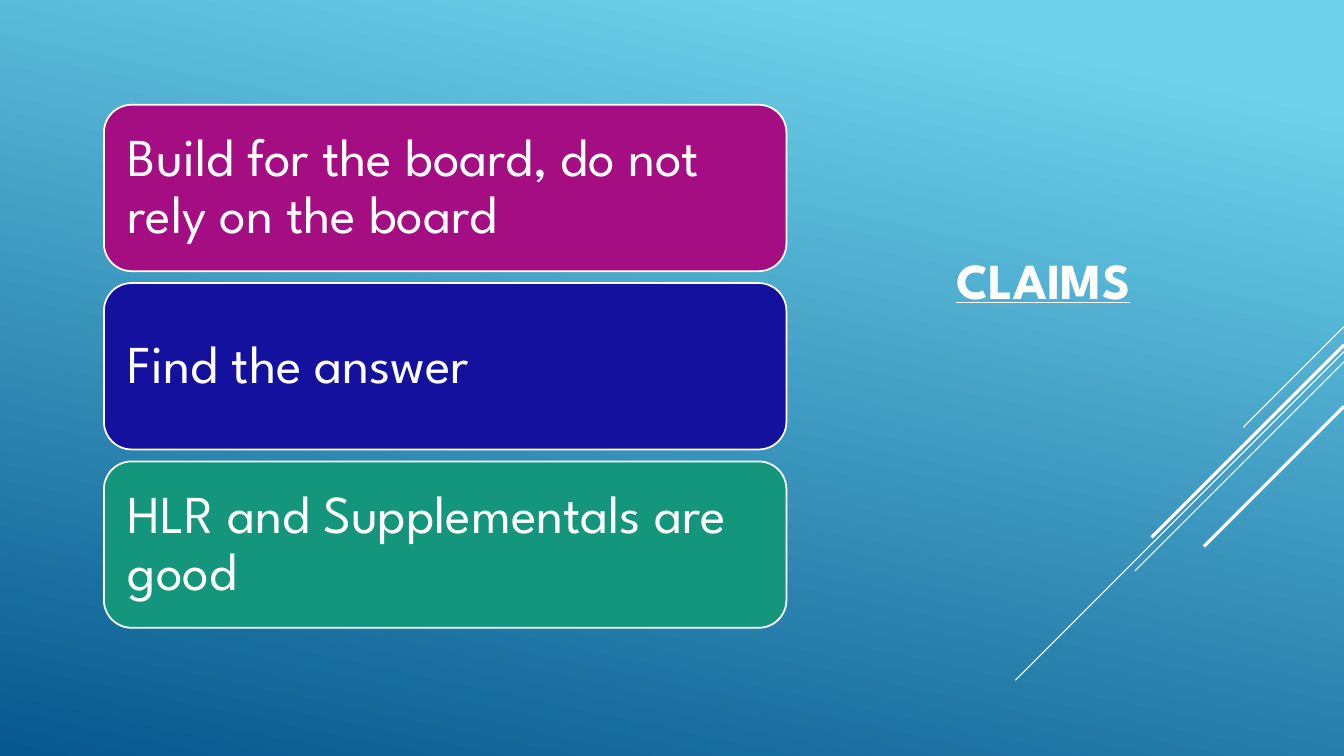
from lxml.etree import SubElement
from pptx import Presentation
from pptx.dml.color import RGBColor
from pptx.enum.shapes import MSO_CONNECTOR as Connector, MSO_SHAPE as Shape
from pptx.enum.text import MSO_ANCHOR as Anchor, MSO_AUTO_SIZE as AutoSize, PP_ALIGN as Align
from pptx.oxml.ns import qn
from pptx.util import Cm, Pt

FONT = "League Spartan"
WHITE = "FFFFFF"
WIDTH, HEIGHT = 33.87, 19.05
CLAIMS = [
    ("Build for the board, do not rely on the board", "A50E82"),
    ("Find the answer", "13119D"),
    ("HLR and Supplementals are good", "14967C"),
]
STREAKS = [
    (8.23, 2.54, 0.75),
    (8.86, 8.28, 0.75),
    (9.12, 5.27, 0.75),
    (8.69, 4.85, 2.25),
    (10.24, 3.53, 2.25),
]


def color(value):
    """Turn a hex string into a colour."""
    return RGBColor.from_string(value)


def format_text(text_frame, size, bold=False, underline=False):
    """Give a text frame the slide's common text style."""
    text_frame.word_wrap = True
    text_frame.auto_size = AutoSize.NONE
    text_frame.vertical_anchor = Anchor.MIDDLE
    for paragraph in text_frame.paragraphs:
        paragraph.alignment = Align.LEFT
        paragraph.line_spacing = 0.9
        for run in paragraph.runs:
            run.font.name = FONT
            run.font.size = Pt(size)
            run.font.bold = bold
            run.font.underline = underline
            run.font.color.rgb = color(WHITE)


def fill_background(slide):
    """Fill the background with the slanted blue gradient."""
    fill = slide.background.fill
    fill.gradient()
    fill.gradient_angle = 258
    for stop, (position, value) in zip(fill.gradient_stops, [(0.1, "6ED2EB"), (1, "06588E")]):
        stop.position = position
        stop.color.rgb = color(value)


def add_streaks(slide, right):
    """Draw the diagonal streaks falling leftwards from the right edge."""
    for top, run, weight in STREAKS:
        streak = slide.shapes.add_connector(
            Connector.STRAIGHT, Cm(right), Cm(top), Cm(right - run), Cm(top + run))
        streak.line.color.rgb = color(WHITE)
        streak.line.width = Pt(weight)
        SubElement(streak._element.spPr, qn("a:effectLst"))


def place_title(slide, left, top, width, height):
    """Place the title placeholder in its box."""
    title = slide.shapes.title
    title.left, title.top, title.width, title.height = map(Cm, (left, top, width, height))
    title.text_frame.text = "CLAIMS"
    format_text(title.text_frame, 36, bold=True, underline=True)


def add_claims(slide, left, top, width, height, gap=0.3):
    """Stack the claim cards evenly in the given box."""
    card_height = (height - gap * (len(CLAIMS) - 1)) / len(CLAIMS)
    for index, (text, fill) in enumerate(CLAIMS):
        card_top = top + index * (card_height + gap)
        card = slide.shapes.add_shape(
            Shape.ROUNDED_RECTANGLE, Cm(left), Cm(card_top), Cm(width), Cm(card_height))
        card.shadow.inherit = False
        card.fill.solid()
        card.fill.fore_color.rgb = color(fill)
        card.line.color.rgb = color(WHITE)
        card.line.width = Pt(1.25)
        text_frame = card.text_frame
        text_frame.text = text
        text_frame.margin_left = text_frame.margin_right = Cm(0.4)
        format_text(text_frame, 38)


def main():
    """Build the claims slide and save it."""
    presentation = Presentation()
    presentation.slide_width, presentation.slide_height = Cm(WIDTH), Cm(HEIGHT)
    slide = presentation.slides.add_slide(presentation.slide_layouts[5])
    fill_background(slide)
    add_streaks(slide, WIDTH)
    place_title(slide, 23.85, 2.62, 8.46, 9.02)
    add_claims(slide, 2.62, 2.64, 17.2, 13.18)
    presentation.save("out.pptx")


if __name__ == "__main__":
    main()
